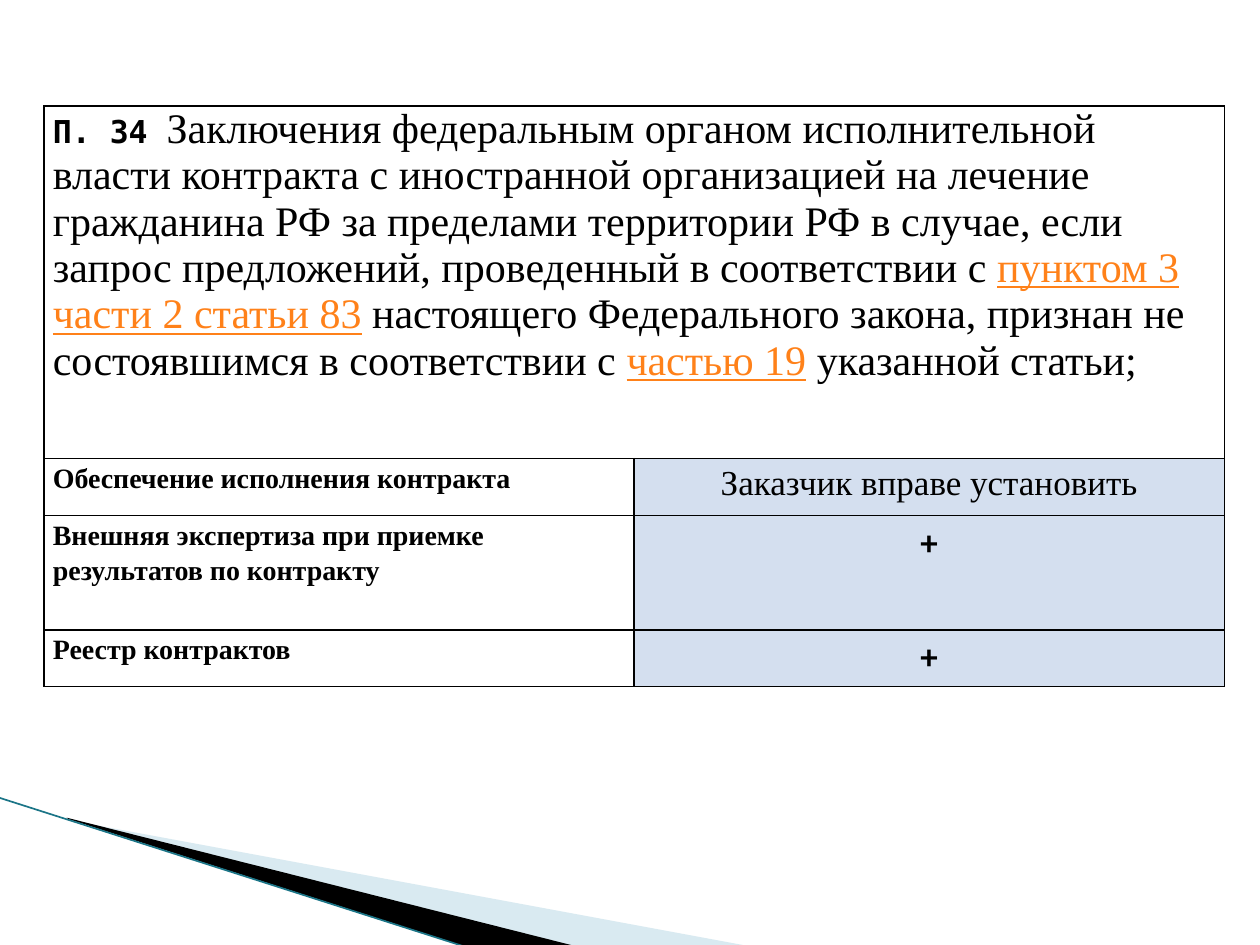
"""Build a slide with a contract requirements table above a corner decoration."""
from lxml import etree
from pptx import Presentation
from pptx.dml.color import RGBColor
from pptx.enum.shapes import MSO_CONNECTOR as Connector
from pptx.enum.text import PP_ALIGN as Align
from pptx.oxml import parse_xml
from pptx.oxml.ns import nsdecls, qn
from pptx.util import Inches, Pt


def color(value):
    return RGBColor.from_string(value)


def add_text(paragraph, text, size=24, font="Times New Roman", bold=False, fill="000000", underline=False):
    run = paragraph.add_run()
    run.text = text
    run.font.size = Pt(size)
    run.font.name = font
    run.font.bold = bold
    run.font.underline = underline
    run.font.color.rgb = color(fill)


presentation = Presentation()
presentation.slide_width, presentation.slide_height = Inches(10), Inches(7.5)
slide = presentation.slides.add_slide(presentation.slide_layouts[6])

wedges = [
    ([(0.55, 6.51), (5.95, 7.51), (4.56, 7.51), (0.55, 6.5)], "A0CBDC", 40),
    ([(0.53, 6.49), (4.57, 7.51), (3.72, 7.52), (0.54, 6.5)], "000000", 100),
]
for points, fill, opacity in wedges:
    corners = [(Inches(x), Inches(y)) for x, y in points]
    builder = slide.shapes.build_freeform(*corners[0])
    builder.add_line_segments(corners[1:], close=True)
    wedge = builder.convert_to_shape()
    wedge.shadow.inherit = False
    wedge.fill.solid()
    wedge.fill.fore_color.rgb = color(fill)
    wedge.line.fill.background()
    if opacity < 100:
        tint = wedge.fill._xPr.find(qn("a:solidFill"))[0]
        etree.SubElement(tint, qn("a:alpha")).set("val", str(opacity * 1000))

edge = slide.shapes.add_connector(Connector.STRAIGHT, Inches(-0.01), Inches(6.33), Inches(3.71), Inches(7.52))
edge.line.color.rgb = color("1B7587")
edge.line.width = Pt(0.95)
etree.SubElement(edge._element.spPr, qn("a:effectLst"))

row_heights = [2.8, 0.45, 0.91, 0.45]
column_widths = [4.68, 4.69]
table = slide.shapes.add_table(
    len(row_heights), len(column_widths), Inches(0.35), Inches(0.84),
    Inches(sum(column_widths)), Inches(sum(row_heights)),
).table
table.first_row = table.horz_banding = False
for row, height in zip(table.rows, row_heights):
    row.height = Inches(height)
for column, width in zip(table.columns, column_widths):
    column.width = Inches(width)
table.cell(0, 0).merge(table.cell(0, 1))

for cell in table.iter_cells():
    cell.margin_left = cell.margin_right = Inches(0.07)
    cell.margin_top = cell.margin_bottom = 0
    properties = cell._tc.get_or_add_tcPr()
    for side in ("lnL", "lnR", "lnT", "lnB"):
        properties.append(parse_xml(
            f'<a:{side} {nsdecls("a")} w="12700"><a:solidFill>'
            f'<a:srgbClr val="000000"/></a:solidFill></a:{side}>'
        ))
    cell.fill.background()

clause = table.cell(0, 0).text_frame.paragraphs[0]
link = {"fill": "FF8119", "underline": True}
add_text(clause, "П. 34 ", size=18, font="DejaVu Sans Mono", bold=True)
add_text(clause, "Заключения федеральным органом исполнительной власти контракта с иностранной "
                 "организацией на лечение гражданина РФ за пределами территории РФ в случае, если "
                 "запрос предложений, проведенный в соответствии с ")
add_text(clause, "пунктом 3 части 2 статьи 83", **link)
add_text(clause, " настоящего Федерального закона, признан не состоявшимся в соответствии с ")
add_text(clause, "частью 19", **link)
add_text(clause, " указанной статьи;")

plus = ("+", {"font": "Calibri", "bold": True})
requirements = [
    ("Обеспечение исполнения контракта", ("Заказчик вправе установить", {})),
    ("Внешняя экспертиза при приемке результатов по контракту", plus),
    ("Реестр контрактов", plus),
]
for index, (requirement, (answer, answer_format)) in enumerate(requirements, start=1):
    label_cell, answer_cell = table.cell(index, 0), table.cell(index, 1)
    label, reply = (cell.text_frame.paragraphs[0] for cell in (label_cell, answer_cell))
    label.line_spacing = reply.line_spacing = 1.15
    reply.alignment = Align.CENTER
    add_text(label, requirement, size=16, bold=True)
    add_text(reply, answer, size=20, **answer_format)
    answer_cell.fill.solid()
    answer_cell.fill.fore_color.rgb = color("D4DFEF")

presentation.save("out.pptx")
